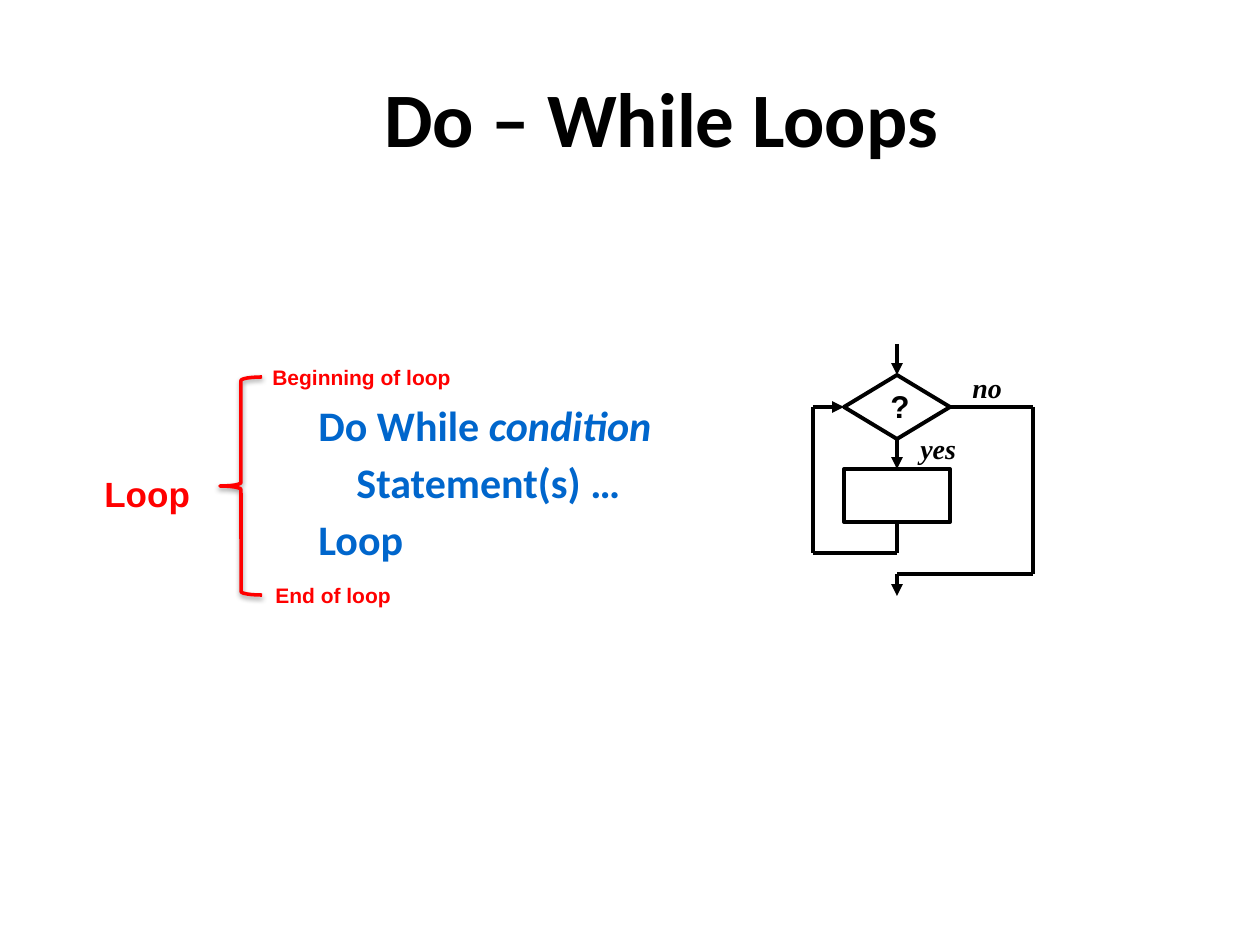
from lxml import etree
from pptx import Presentation
from pptx.dml.color import RGBColor
from pptx.enum.shapes import MSO_CONNECTOR, MSO_SHAPE
from pptx.enum.text import MSO_ANCHOR, PP_ALIGN
from pptx.oxml import parse_xml
from pptx.oxml.ns import nsdecls, qn
from pptx.util import Emu, Pt

STRAIGHT = MSO_CONNECTOR.STRAIGHT
BRACE = MSO_SHAPE.LEFT_BRACE
DECISION = MSO_SHAPE.FLOWCHART_DECISION
PROCESS = MSO_SHAPE.FLOWCHART_PROCESS
CENTER, LEFT = PP_ALIGN.CENTER, PP_ALIGN.LEFT
MIDDLE, TOP = MSO_ANCHOR.MIDDLE, MSO_ANCHOR.TOP
SIDE_TOP, SIDE_LEFT, SIDE_BOTTOM, SIDE_RIGHT = range(4)

EMU_PER_PX = 914400 / 126
BLACK, WHITE, RED, BLUE = "000000", "FFFFFF", "FF0000", "0066CC"

TITLE = {"name": "Calibri", "size": Pt(44), "bold": True}
CODE = {"name": "Calibri", "size": Pt(24), "bold": True}
LOOP_LABEL = {"name": "Arial", "size": Pt(20), "bold": True}
EDGE_LABEL = {"name": "Arial", "size": Pt(12), "bold": True}
BRANCH = {"name": "Times New Roman", "size": Pt(16), "bold": True, "italic": True}
QUESTION = {"name": "Arial", "size": Pt(18), "bold": True}

BRACE_SHADOW = (
    f'<a:effectLst {nsdecls("a")}><a:outerShdw blurRad="39370" dist="20320" '
    'dir="5400000" rotWithShape="0"><a:srgbClr val="000000">'
    '<a:alpha val="38000"/></a:srgbClr></a:outerShdw></a:effectLst>'
)


def px(length):
    return Emu(round(length * EMU_PER_PX))


def color(value):
    return RGBColor.from_string(value)


def apply(target, values):
    for name, value in values.items():
        setattr(target, name, value)


class SlideBuilder:
    def __init__(self, slide, line_width=Pt(2.25)):
        self.shapes = slide.shapes
        self.line_width = line_width

    def text(self, box, lines, font, fill, align=LEFT, anchor=TOP, wrap=True, before=0):
        shape = self.shapes.add_textbox(*map(px, box))
        frame = shape.text_frame
        apply(frame, {"word_wrap": wrap, "vertical_anchor": anchor})
        for index, (indent, runs) in enumerate(lines):
            paragraph = frame.add_paragraph() if index else frame.paragraphs[0]
            apply(paragraph, {"alignment": align, "space_before": Pt(before)})
            if indent:
                paragraph._p.get_or_add_pPr().set("marL", str(px(indent)))
            for content, extra in runs:
                run = paragraph.add_run()
                run.text = content
                apply(run.font, {**font, **extra})
                run.font.color.rgb = color(fill)

    def label(self, box, content, font, fill=BLACK, **options):
        self.text(box, [(0, [(content, {})])], font, fill, **options)

    def node(self, kind, box):
        shape = self.shapes.add_shape(kind, *map(px, box))
        shape.shadow.inherit = False
        shape.fill.solid()
        shape.fill.fore_color.rgb = color(WHITE)
        shape.line.color.rgb = color(BLACK)
        shape.line.width = self.line_width
        return shape

    def brace(self, box):
        shape = self.shapes.add_shape(BRACE, *map(px, box))
        shape.fill.background()
        shape.line.color.rgb = color(RED)
        shape.line.width = Pt(2)
        shape._element.spPr.append(parse_xml(BRACE_SHADOW))

    def line(self, start, end, arrow=False, begin=None, finish=None):
        connector = self.shapes.add_connector(STRAIGHT, *map(px, start + end))
        if begin:
            connector.begin_connect(*begin)
        if finish:
            connector.end_connect(*finish)
        connector.line.color.rgb = color(BLACK)
        connector.line.width = self.line_width
        if arrow:
            outline = connector.line._get_or_add_ln()
            etree.SubElement(outline, qn("a:tailEnd"), type="triangle")
        etree.SubElement(connector._element.spPr, qn("a:effectLst"))

    def route(self, points, arrow=False, begin=None, finish=None):
        last = len(points) - 2
        for index, (start, end) in enumerate(zip(points, points[1:])):
            self.line(start, end, arrow and index == last,
                      begin if index == 0 else None,
                      finish if index == last else None)


def draw_code(builder):
    builder.text((306, 393, 525, 215), [
        (0, [("Do While ", {}), ("condition", {"italic": True})]),
        (38, [("Statement(s) …", {})]),
        (0, [("Loop", {})]),
    ], CODE, BLUE, before=4)
    builder.label((92, 466, 112, 55), "Loop", LOOP_LABEL, RED, wrap=False)
    builder.brace((220, 377, 42, 218))
    builder.label((260, 358, 205, 38), "Beginning of loop", EDGE_LABEL, RED, wrap=False)
    builder.label((263, 576, 142, 38), "End of loop", EDGE_LABEL, RED, wrap=False)


def draw_flowchart(builder):
    node_left, node_width = 844, 106
    node_right = node_left + node_width
    center = node_left + node_width // 2
    test_top, test_height = 375, 64
    test_middle, test_bottom = test_top + test_height // 2, test_top + test_height
    body_top, body_height = 469, 53
    body_bottom = body_top + body_height
    back_x, back_y = 813, 553
    exit_x, exit_y = 1033, 574

    test = builder.node(DECISION, (node_left, test_top, node_width, test_height))
    body = builder.node(PROCESS, (node_left, body_top, node_width, body_height))

    builder.route([(center, 344), (center, test_top)], True, finish=(test, SIDE_TOP))
    builder.route([(center, test_bottom), (center, body_top)], True,
                  (test, SIDE_BOTTOM), (body, SIDE_TOP))
    builder.route([(center, body_bottom), (center, back_y), (back_x, back_y),
                   (back_x, test_middle), (node_left, test_middle)], True,
                  (body, SIDE_BOTTOM), (test, SIDE_LEFT))
    builder.route([(node_right, test_middle), (exit_x, test_middle), (exit_x, exit_y),
                   (center, exit_y), (center, 596)], True, (test, SIDE_RIGHT))

    builder.label((908, 425, 73, 47), "yes", BRANCH)
    builder.label((960, 364, 73, 47), "no", BRANCH)
    builder.label((878, 381, 47, 50), "?", QUESTION, wrap=False)


def main():
    presentation = Presentation()
    presentation.slide_width, presentation.slide_height = px(1260), px(945)
    slide = presentation.slides.add_slide(presentation.slide_layouts[6])
    builder = SlideBuilder(slide)
    builder.label((126, 38, 1071, 158), "Do – While Loops", TITLE,
                  align=CENTER, anchor=MIDDLE)
    draw_code(builder)
    draw_flowchart(builder)
    presentation.save("out.pptx")


if __name__ == "__main__":
    main()
